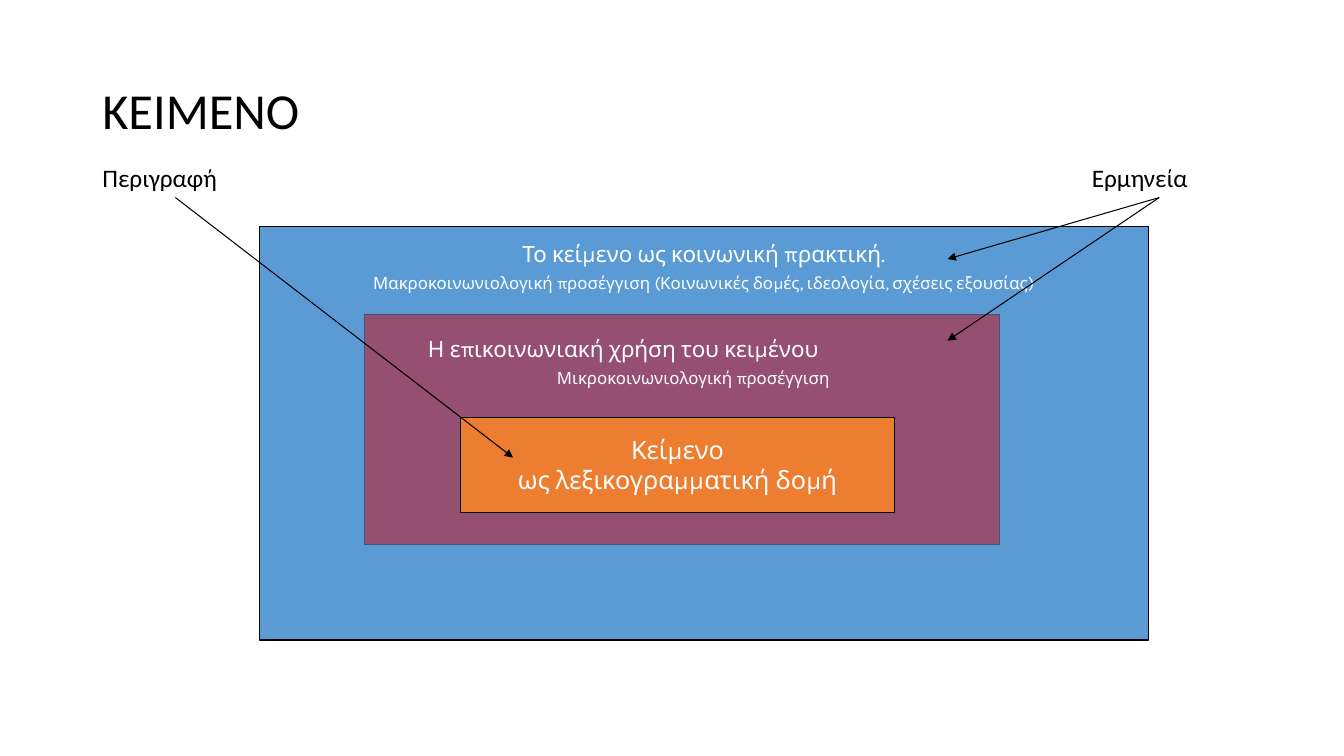
import dataclasses

import pptx
import pptx.dml.color
import pptx.enum.shapes
import pptx.enum.text
import pptx.oxml.ns
import pptx.util
from lxml import etree

ALIGN = pptx.enum.text.PP_ALIGN
ANCHOR = pptx.enum.text.MSO_ANCHOR


@dataclasses.dataclass(frozen=True)
class Theme:
    ink: str = "000000"
    paper: str = "FFFFFF"
    social: str = "5B9BD5"
    communicative: str = "954F72"
    communicative_edge: str = "44546A"
    lexical: str = "ED7D31"
    heading_font: str = "Calibri"
    diagram_font: str = "Karla"
    title_size: int = 36
    label_size: int = 18
    layer_size: int = 16
    note_size: int = 12
    note_gap: int = 4
    line_width: float = 0.75
    line_spacing: float = 0.9


class SlideBuilder:
    """Draws themed elements on one slide, placed on an 80 by 45 grid."""

    columns, rows = 80, 45

    def __init__(self, presentation, theme):
        self.theme = theme
        self.column = presentation.slide_width / self.columns
        self.row = presentation.slide_height / self.rows
        self.slide = presentation.slides.add_slide(presentation.slide_layouts[6])

    def place(self, *lengths):
        units = (self.column, self.row) * 2
        return [round(length * unit) for length, unit in zip(lengths, units)]

    def color(self, value):
        return pptx.dml.color.RGBColor.from_string(value)

    def set_lines(self, shape, lines, font, sizes, color, align, anchor, wrap=True):
        frame = shape.text_frame
        frame.text = "\n".join(lines)
        frame.word_wrap = wrap
        frame.vertical_anchor = anchor
        for paragraph, size in zip(frame.paragraphs, sizes):
            paragraph.alignment = align
            for run in paragraph.runs:
                run.font.name = font
                run.font.size = pptx.util.Pt(size)
                run.font.color.rgb = self.color(color)
        return frame.paragraphs

    def heading(self, box, text, size, anchor):
        shape = self.slide.shapes.add_textbox(*self.place(*box))
        paragraph = self.set_lines(shape, [text], self.theme.heading_font, [size],
                                   self.theme.ink, ALIGN.LEFT, anchor)[0]
        paragraph.line_spacing = self.theme.line_spacing
        return paragraph

    def label_row(self, box, left_label, right_label, tab_column):
        paragraph = self.heading(box, f"{left_label}\t{right_label}",
                                 self.theme.label_size, ANCHOR.TOP)
        properties = paragraph._p.get_or_add_pPr()
        tabs = etree.SubElement(properties, pptx.oxml.ns.qn("a:tabLst"))
        etree.SubElement(tabs, pptx.oxml.ns.qn("a:tab"),
                         pos=str(round(tab_column * self.column)), algn="l")

    def rectangle(self, box, fill, edge=None):
        shape = self.slide.shapes.add_shape(
            pptx.enum.shapes.MSO_SHAPE.RECTANGLE, *self.place(*box))
        shape.shadow.inherit = False
        shape.fill.solid()
        shape.fill.fore_color.rgb = self.color(fill)
        if edge:
            shape.line.color.rgb = self.color(edge)
            shape.line.width = pptx.util.Pt(self.theme.line_width)
        else:
            shape.line.fill.background()
        return shape

    def core(self, box, lines):
        theme = self.theme
        shape = self.rectangle(box, theme.lexical, theme.ink)
        self.set_lines(shape, lines, theme.diagram_font, [theme.label_size] * len(lines),
                       theme.paper, ALIGN.CENTER, ANCHOR.MIDDLE, wrap=False)

    def caption(self, box, fill, layer, note, indent=None):
        theme = self.theme
        first, second = self.set_lines(
            self.rectangle(box, fill), [layer, note], theme.diagram_font,
            [theme.layer_size, theme.note_size], theme.paper, ALIGN.CENTER, ANCHOR.TOP)
        second.space_before = pptx.util.Pt(theme.note_gap)
        if indent is not None:
            first.alignment = ALIGN.LEFT
            first._p.get_or_add_pPr().set("marL", str(round(indent * self.column)))

    def arrow(self, start, end):
        connector = self.slide.shapes.add_connector(
            pptx.enum.shapes.MSO_CONNECTOR.STRAIGHT, *self.place(*start, *end))
        connector.line.color.rgb = self.color(self.theme.ink)
        connector.line.width = pptx.util.Pt(self.theme.line_width)
        properties = connector._element.spPr
        outline = properties.find(pptx.oxml.ns.qn("a:ln"))
        etree.SubElement(outline, pptx.oxml.ns.qn("a:tailEnd"), type="triangle")
        etree.SubElement(properties, pptx.oxml.ns.qn("a:effectLst"))


def main():
    theme = Theme()
    presentation = pptx.Presentation()
    presentation.slide_width = pptx.util.Inches(13.33)
    presentation.slide_height = pptx.util.Inches(7.5)
    builder = SlideBuilder(presentation, theme)

    builder.heading((5.5, 2.4, 69, 8.7), "ΚΕΙΜΕΝΟ", theme.title_size, ANCHOR.MIDDLE)
    builder.label_row((5.5, 9.55, 69, 3), "Περιγραφή", "Ερμηνεία", 58.9)

    builder.rectangle((15.42, 13.5, 52.92, 24.6), theme.social, theme.ink)
    builder.rectangle((21.72, 18.72, 37.8, 13.68), theme.communicative,
                      theme.communicative_edge)
    builder.core((27.4, 24.84, 25.86, 5.64), ["Κείμενο", "ως λεξικογραμματική δομή"])
    builder.caption((23.64, 19.68, 35.28, 4), theme.communicative,
                    "Η επικοινωνιακή χρήση του κειμένου",
                    "Μικροκοινωνιολογική προσέγγιση", indent=1.24)
    builder.caption((16.08, 14, 51.66, 4), theme.social,
                    "Το κείμενο ως κοινωνική πρακτική.",
                    "Μακροκοινωνιολογική προσέγγιση "
                    "(Κοινωνικές δομές, ιδεολογία, σχέσεις εξουσίας)")

    builder.arrow((10.44, 11.76), (30.54, 27.24))
    for target_row in (15.42, 20.28):
        builder.arrow((69, 11.76), (56.4, target_row))

    presentation.save("out.pptx")


if __name__ == "__main__":
    main()
